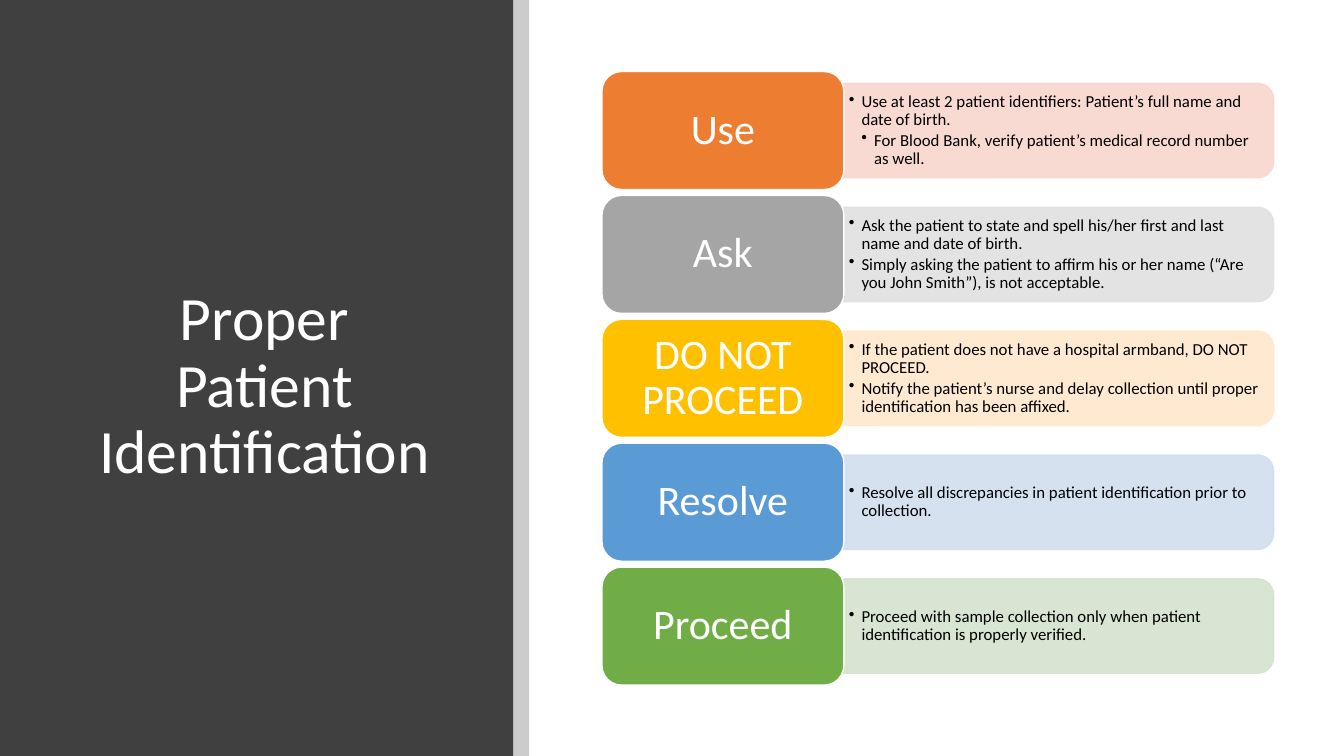
"""Builds the patient identification slide: a title panel and five labelled steps."""
from dataclasses import dataclass

from lxml import etree
from pptx import Presentation
from pptx.dml.color import RGBColor
from pptx.enum.shapes import MSO_SHAPE
from pptx.enum.text import MSO_ANCHOR, MSO_AUTO_SIZE, PP_ALIGN
from pptx.oxml.ns import qn
from pptx.util import Pt

RECT = MSO_SHAPE.RECTANGLE
ROUNDED = MSO_SHAPE.ROUNDED_RECTANGLE
ROUND_TOP = MSO_SHAPE.ROUND_2_SAME_RECTANGLE
MIDDLE = MSO_ANCHOR.MIDDLE
CENTER = PP_ALIGN.CENTER
NO_FIT = MSO_AUTO_SIZE.NONE


@dataclass(frozen=True)
class Theme:
    font: str = "Calibri"
    title_size: int = 44
    label_size: int = 30
    detail_size: int = 12
    light: str = "FFFFFF"
    dark: str = "000000"
    panel: str = "404040"


STEPS = [
    ("Use", "ED7D31", "F8D7CE", [
        (0, "Use at least 2 patient identifiers: Patient’s full name and date of birth."),
        (1, "For Blood Bank, verify patient’s medical record number as well.")]),
    ("Ask", "A5A5A5", "E1E1E1", [
        (0, "Ask the patient to state and spell his/her first and last name and date of birth."),
        (0, "Simply asking the patient to affirm his or her name (“Are you John Smith”), "
            "is not acceptable.")]),
    ("DO NOT PROCEED", "FFC000", "FFE8CC", [
        (0, "If the patient does not have a hospital armband, DO NOT PROCEED."),
        (0, "Notify the patient’s nurse and delay collection until proper identification "
            "has been affixed.")]),
    ("Resolve", "5B9BD5", "D2DEEF", [
        (0, "Resolve all discrepancies in patient identification prior to collection.")]),
    ("Proceed", "70AD47", "D5E3CF", [
        (0, "Proceed with sample collection only when patient identification is "
            "properly verified.")]),
]

LABEL_X, LABEL_W, LABEL_H = 430, 172.8, 84.3
BAND_W, BAND_H = 306.9, 67.4
FIRST_Y, PITCH = 51.1, 88.5


class Deck:
    """Holds the theme and the current slide."""

    def __init__(self, s, theme):
        self.s, self.theme = s, theme

    def set_frame(self, tf, dx, dy):
        """Sets wrapping, anchor and margins."""
        tf.word_wrap, tf.auto_size, tf.vertical_anchor = True, NO_FIT, MIDDLE
        tf.margin_left = tf.margin_right = Pt(dx)
        tf.margin_top = tf.margin_bottom = Pt(dy)

    def style(self, p, size, color, after=0):
        """Formats a paragraph and its runs."""
        p.line_spacing, p.space_before, p.space_after = 0.9, Pt(0), Pt(after)
        for r in p.runs:
            r.font.name, r.font.size = self.theme.font, Pt(size)
            r.font.color.rgb = RGBColor.from_string(color)

    def shape(self, kind, x, y, w, h, fill, line=None, alpha=100):
        """Adds a filled preset shape."""
        sp = self.s.shapes.add_shape(kind, Pt(x), Pt(y), Pt(w), Pt(h))
        sp.shadow.inherit = False
        sp.fill.solid()
        sp.fill.fore_color.rgb = RGBColor.from_string(fill)
        if line:
            sp.line.width = Pt(1)
            sp.line.color.rgb = RGBColor.from_string(line)
        else:
            sp.line.fill.background()
        if alpha < 100:
            for clr in sp._element.spPr.iter(qn("a:srgbClr")):
                etree.SubElement(clr, qn("a:alpha")).set("val", str(alpha * 1000))
        return sp

    def title(self, text, x, y, w, h):
        """Fills the title placeholder and brings it to the front."""
        sp = self.s.shapes.title
        sp.left, sp.top, sp.width, sp.height = Pt(x), Pt(y), Pt(w), Pt(h)
        tf = sp.text_frame
        tf.text = text
        self.set_frame(tf, 7.2, 3.6)
        p = tf.paragraphs[0]
        p.alignment = CENTER
        self.style(p, self.theme.title_size, self.theme.light)
        sp._element.getparent().append(sp._element)

    def label(self, text, x, y, w, h, fill):
        """Adds a rounded box with a centred step name."""
        tf = self.shape(ROUNDED, x, y, w, h, fill, self.theme.light).text_frame
        tf.text = text
        self.set_frame(tf, 12.7, 8.4)
        p = tf.paragraphs[0]
        p.alignment = CENTER
        self.style(p, self.theme.label_size, self.theme.light)

    def band(self, x, y, w, h, fill):
        """Adds a band whose right corners are rounded."""
        sp = self.shape(ROUND_TOP, x + (w - h) / 2, y + (h - w) / 2, h, w, fill, fill, 90)
        sp.rotation = 90

    def bullets(self, items, x, y, w, h):
        """Adds a bulleted list of (level, text) items."""
        tf = self.s.shapes.add_textbox(Pt(x), Pt(y), Pt(w), Pt(h)).text_frame
        self.set_frame(tf, 3.6, 1.8)
        tf.text = "\n".join(text for _, text in items)
        for p, (level, _) in zip(tf.paragraphs, items):
            p.level = level
            self.style(p, self.theme.detail_size, self.theme.dark, 1.8)
            pPr = p._p.get_or_add_pPr()
            pPr.set("marL", str(Pt(9 * (level + 1))))
            pPr.set("indent", str(Pt(-9)))
            etree.SubElement(pPr, qn("a:buChar")).set("char", "•")


def main():
    """Builds and saves the slide."""
    prs = Presentation()
    prs.slide_width, prs.slide_height = Pt(960), Pt(540)
    theme = Theme()
    deck = Deck(prs.slides.add_slide(prs.slide_layouts[5]), theme)
    deck.shape(RECT, 0, 0, 366.5, 540, theme.panel)
    deck.title("Proper Patient Identification", 57.6, 64, 262.8, 425.5)
    deck.shape(RECT, 366.5, 0, 11.5, 540, theme.dark, alpha=20)
    band_x = LABEL_X + LABEL_W
    for i, (name, color, tint, items) in enumerate(STEPS):
        y = FIRST_Y + i * PITCH
        band_y = y + (LABEL_H - BAND_H) / 2
        deck.band(band_x, band_y, BAND_W, BAND_H, tint)
        deck.bullets(items, band_x, band_y + 3.1, BAND_W - 3.3, BAND_H - 6.2)
        deck.label(name, LABEL_X, y, LABEL_W, LABEL_H, color)
    prs.save("out.pptx")


if __name__ == "__main__":
    main()
